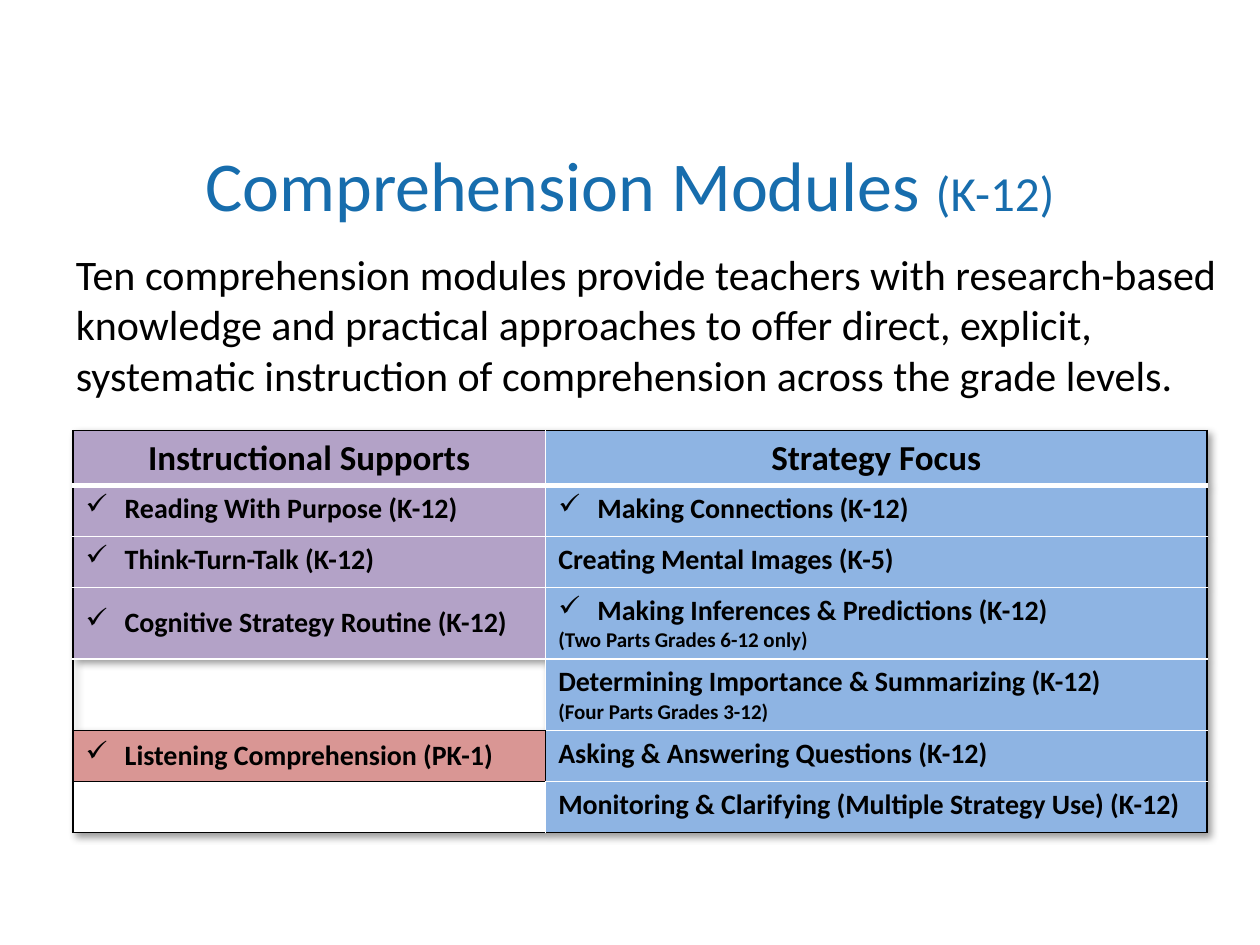
from lxml.etree import SubElement
from pptx import Presentation
from pptx.dml.color import RGBColor
from pptx.enum.text import MSO_ANCHOR, PP_ALIGN
from pptx.oxml import parse_xml
from pptx.oxml.ns import nsdecls, qn
from pptx.util import Cm, Pt

BLACK, WHITE = "000000", "FFFFFF"
PURPLE, BLUE, ROSE = "B3A2C7", "8EB4E3", "D99694"


def color(code):
    return RGBColor.from_string(code)


def write(para, text, size=16, ink=BLACK, bold=False, align=None, check=False):
    if check:
        props = para._p.get_or_add_pPr()
        props.set("marL", str(Cm(0.79)))
        props.set("indent", str(-Cm(0.79)))
        SubElement(props, qn("a:buChar")).set("char", "✓")
    if align is not None:
        para.alignment = align
    run = para.add_run()
    run.text = text
    run.font.name = "Calibri"
    run.font.size = Pt(size)
    run.font.bold = bold
    run.font.color.rgb = color(ink)


deck = Presentation()
deck.slide_width, deck.slide_height = Cm(25.4), Cm(19.05)
slide = deck.slides.add_slide(deck.slide_layouts[5])

# Title
title = slide.shapes.title
title.left, title.top = Cm(1.27), Cm(2.64)
title.width, title.height = Cm(22.86), Cm(2.13)
title.text_frame.vertical_anchor = MSO_ANCHOR.MIDDLE
head = title.text_frame.paragraphs[0]
for text, size in [("Comprehension Modules ", 40), ("(K-12)", 28)]:
    write(head, text, size=size, ink="176DAD", align=PP_ALIGN.CENTER)

# Introduction
intro = slide.shapes.add_textbox(Cm(0.64), Cm(4.88), Cm(24.33), Cm(3.5))
intro.text_frame.word_wrap = True
lead = intro.text_frame.paragraphs[0]
lead._p.get_or_add_pPr().set("marL", str(Cm(0.64)))
write(lead, "Ten comprehension modules provide teachers with research-based "
      "knowledge and practical approaches to offer direct, explicit, "
      "systematic instruction of comprehension across the grade levels.", size=24)

# Module table: each cell is fill, text, check mark, small note
rows = [
    [(PURPLE, "Instructional Supports", False, ""),
     (BLUE, "Strategy Focus", False, "")],
    [(PURPLE, "Reading With Purpose (K-12)", True, ""),
     (BLUE, "Making Connections (K-12)", True, "")],
    [(PURPLE, "Think-Turn-Talk (K-12)", True, ""),
     (BLUE, "Creating Mental Images (K-5)", False, "")],
    [(PURPLE, "Cognitive Strategy Routine (K-12)", True, ""),
     (BLUE, "Making Inferences & Predictions (K-12)", True,
      "(Two Parts Grades 6-12 only)")],
    [(None, "", False, ""),
     (BLUE, "Determining Importance & Summarizing (K-12)", False,
      "(Four Parts Grades 3-12)")],
    [(ROSE, "Listening Comprehension (PK-1)", True, ""),
     (BLUE, "Asking & Answering Questions (K-12)", False, "")],
    [(WHITE, "", False, ""),
     (BLUE, "Monitoring & Clarifying (Multiple Strategy Use) (K-12)", False, "")],
]
middle = {(0, 0), (0, 1), (3, 0), (5, 0)}
last = len(rows) - 1

table = slide.shapes.add_table(len(rows), 2, Cm(1.47), Cm(8.68),
                               Cm(22.86), Cm(1.03) * len(rows)).table
table.first_row = table.horz_banding = False
table.columns[0].width, table.columns[1].width = Cm(9.53), Cm(13.33)
table._tbl.tblPr.insert(0, parse_xml(
    f'<a:effectLst {nsdecls("a")}><a:outerShdw blurRad="50800" dist="38100" '
    'dir="2700000" algn="tl"><a:prstClr val="black"><a:alpha val="40000"/>'
    '</a:prstClr></a:outerShdw></a:effectLst>'))

for r, row in enumerate(rows):
    table.rows[r].height = Cm(1.03)
    for c, (fill, text, check, note) in enumerate(row):
        cell = table.cell(r, c)

        # Black runs round the table and round the listening cell
        dark = {
            "L": c == 0 or r == 5,
            "R": c == 1 or r == 5,
            "T": r == 0 or (c == 0 and r in (5, 6)),
            "B": r == last or (c == 0 and r in (4, 5)),
        }
        for side, black in dark.items():
            wide = 3 if r == 0 and side == "B" else 1
            line = SubElement(cell._tc.get_or_add_tcPr(), qn(f"a:ln{side}"),
                              w=str(Pt(wide)))
            paint = SubElement(line, qn("a:solidFill"))
            SubElement(paint, qn("a:srgbClr"), val=BLACK if black else WHITE)

        if fill:
            cell.fill.solid()
            cell.fill.fore_color.rgb = color(fill)
        else:
            cell.fill.background()
        if (r, c) in middle:
            cell.vertical_anchor = MSO_ANCHOR.MIDDLE
        frame = cell.text_frame
        if text:
            write(frame.paragraphs[0], text, size=16 if r else 20, bold=True,
                  align=None if r else PP_ALIGN.CENTER, check=check)
        if note:
            write(frame.add_paragraph(), note, size=12, bold=True)

deck.save("out.pptx")
